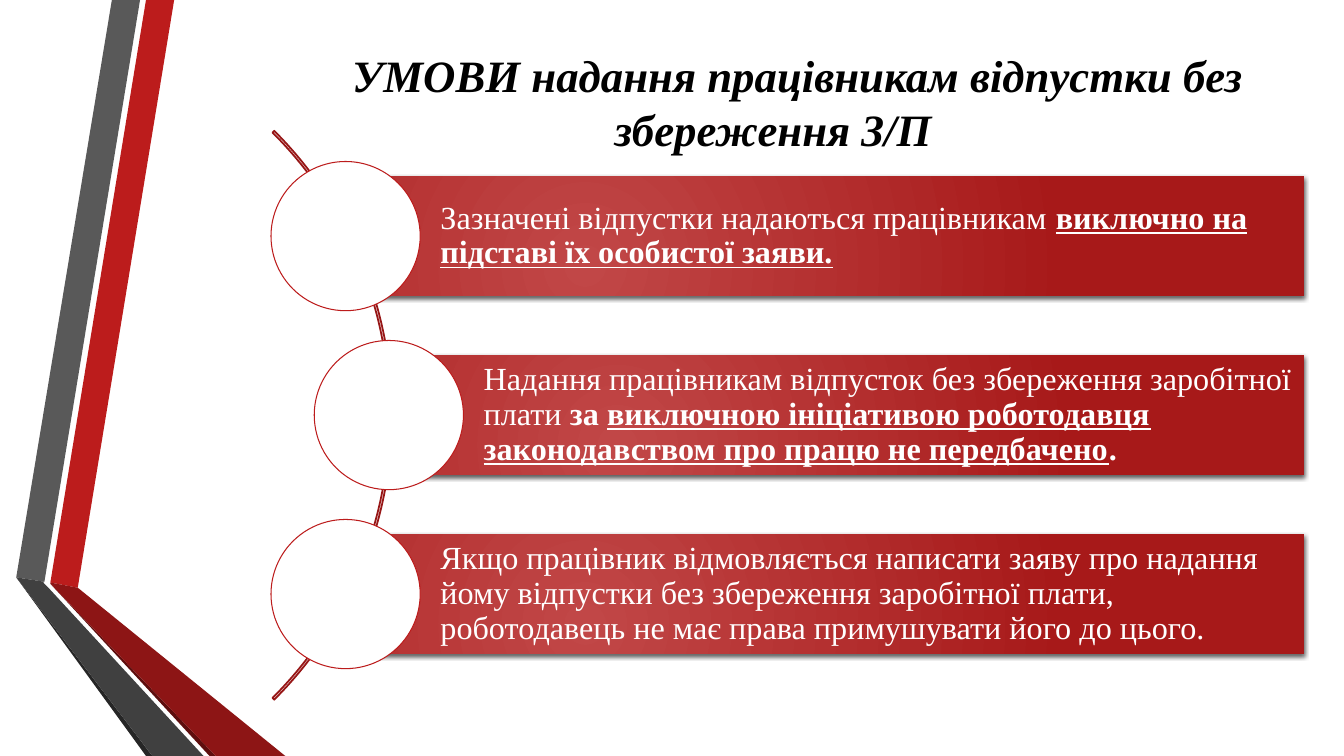
from pptx import Presentation
from pptx import util as u
from pptx.dml.color import RGBColor
from pptx.enum import shapes, text
from pptx.oxml import parse_xml
from pptx.oxml.ns import nsdecls

HUES = {
    "red": "BC1C1C", "gray": "595959", "coal": "262626", "wine": "5E0E0E",
    "brick": "8D1515", "slate": "404040", "arc": "971616", "glow": "C14747",
    "deep": "A71919", "white": "FFFFFF", "black": "000000",
}
FONT = "Times New Roman"
KIND = shapes.MSO_SHAPE

RIBBONS = [
    ("red", [(1.27, 14.68), (1.96, 14.81), (4.39, 0), (3.68, 0)]),
    ("gray", [(3.53, 0), (2.82, 0), (0.41, 14.55), (1.12, 14.66)]),
    ("coal", [(0.41, 14.55), (3.68, 19.05), (3.84, 19.05)]),
    ("wine", [(1.27, 14.71), (5.28, 19.05), (5.44, 19.05)]),
    ("brick", [(1.27, 14.71), (5.44, 19.05), (7.19, 19.05), (1.96, 14.81), (1.27, 14.68)]),
    ("slate", [(5.13, 19.05), (1.22, 14.81), (1.09, 14.68), (1.12, 14.66),
               (0.41, 14.55), (3.84, 19.05)]),
]

BOLD = {"bold": True}
LINED = {"bold": True, "underline": True}
RULES = [
    (8.71, [("Зазначені відпустки надаються працівникам ", {}),
            ("виключно на підставі їх особистої заяви.", LINED)]),
    (9.8, [("Надання працівникам відпусток без збереження заробітної плати ", {}),
           ("за ", BOLD),
           ("виключною ініціативою роботодавця законодавством про працю не передбачено", LINED),
           (".", BOLD)]),
    (8.71, [("Якщо працівник відмовляється написати заяву про надання йому відпустки "
             "без збереження заробітної плати, роботодавець не має права примушувати "
             "його до цього.", {})]),
]
RIGHT, TOP, STEP, HIGH, DISC = 32.87, 4.44, 4.51, 3.02, 3.76


def paint(name):
    return RGBColor.from_string(HUES[name])


def write(para, words, size=23, color="white", bold=False, italic=False, underline=False):
    run = para.add_run()
    run.text = words
    font = run.font
    font.name, font.size = FONT, u.Pt(size)
    font.bold, font.italic, font.underline = bold, italic, underline
    font.color.rgb = paint(color)


class Deck:
    def __init__(self):
        self.show = Presentation()
        self.show.slide_width = u.Cm(33.87)
        self.show.slide_height = u.Cm(19.05)
        self.slide = self.show.slides.add_slide(self.show.slide_layouts[5])

    def title(self, words, left, top, width, height):
        head = self.slide.shapes.title
        head.left, head.top, head.width, head.height = map(u.Cm, (left, top, width, height))
        frame = head.text_frame
        frame.word_wrap = True
        frame.auto_size = text.MSO_AUTO_SIZE.NONE
        frame.vertical_anchor = text.MSO_ANCHOR.TOP
        para = frame.paragraphs[0]
        para.alignment = text.PP_ALIGN.CENTER
        para._p.get_or_add_pPr().set("indent", str(u.Cm(1.24)))
        write(para, words, size=32, color="black", bold=True, italic=True)

    def ribbon(self, color, points):
        spots = [(u.Cm(x), u.Cm(y)) for x, y in points]
        pen = self.slide.shapes.build_freeform(*spots[0])
        pen.add_line_segments(spots[1:], close=True)
        band = pen.convert_to_shape()
        band.shadow.inherit = False
        band.fill.solid()
        band.fill.fore_color.rgb = paint(color)
        band.line.fill.background()

    def shape(self, kind, left, top, width, height, fill=None, line=None, weight=0.75):
        item = self.slide.shapes.add_shape(kind, *map(u.Cm, (left, top, width, height)))
        item.shadow.inherit = False
        if fill:
            item.fill.solid()
            item.fill.fore_color.rgb = paint(fill)
        else:
            item.fill.background()
        if line:
            item.line.color.rgb = paint(line)
            item.line.width = u.Pt(weight)
        else:
            item.line.fill.background()
        return item

    def arc(self, left, top, side):
        bow = self.shape(KIND.BLOCK_ARC, left, top, side, side, line="arc", weight=1.25)
        for spot, value in enumerate((189, 27, 0.003)):
            bow.adjustments[spot] = value

    def bar(self, left, top, width, height, parts):
        item = self.shape(KIND.RECTANGLE, left, top, width, height, fill="deep")
        self.glow(item)
        frame = item.text_frame
        frame.word_wrap = True
        frame.vertical_anchor = text.MSO_ANCHOR.MIDDLE
        frame.margin_left = u.Cm(2.39)
        frame.margin_top = frame.margin_right = frame.margin_bottom = u.Cm(0.15)
        para = frame.paragraphs[0]
        para.alignment = text.PP_ALIGN.LEFT
        para.line_spacing = 0.9
        for words, style in parts:
            write(para, words, **style)

    def glow(self, item):
        props = item._element.spPr
        grad = parse_xml(
            f'<a:gradFill {nsdecls("a")} rotWithShape="1"><a:gsLst>'
            f'<a:gs pos="0"><a:srgbClr val="{HUES["glow"]}"/></a:gs>'
            f'<a:gs pos="100000"><a:srgbClr val="{HUES["deep"]}"/></a:gs></a:gsLst>'
            '<a:path path="circle">'
            '<a:fillToRect l="50000" t="100000" r="100000" b="50000"/>'
            '</a:path></a:gradFill>')
        shade = parse_xml(
            f'<a:effectLst {nsdecls("a")}><a:outerShdw blurRad="{u.Pt(3)}" '
            f'dist="{u.Pt(2)}" dir="5400000" rotWithShape="0">'
            f'<a:srgbClr val="{HUES["black"]}"><a:alpha val="64000"/></a:srgbClr>'
            '</a:outerShdw></a:effectLst>')
        for tag, part in (("solidFill", grad), ("effectLst", shade)):
            props.replace(props.find(f"{{*}}{tag}"), part)


def main():
    deck = Deck()
    for color, points in RIBBONS:
        deck.ribbon(color, points)
    deck.title("УМОВИ надання працівникам відпустки без збереження З/П",
               5.11, 1.07, 28.75, 3)
    deck.arc(-10.39, 0.33, 20.27)
    for row, (left, parts) in enumerate(RULES):
        top = TOP + row * STEP
        deck.bar(left, top, RIGHT - left, HIGH, parts)
        deck.shape(KIND.OVAL, left - DISC / 2, top + (HIGH - DISC) / 2, DISC, DISC,
                   fill="white", line="red")
    deck.show.save("out.pptx")


if __name__ == "__main__":
    main()
